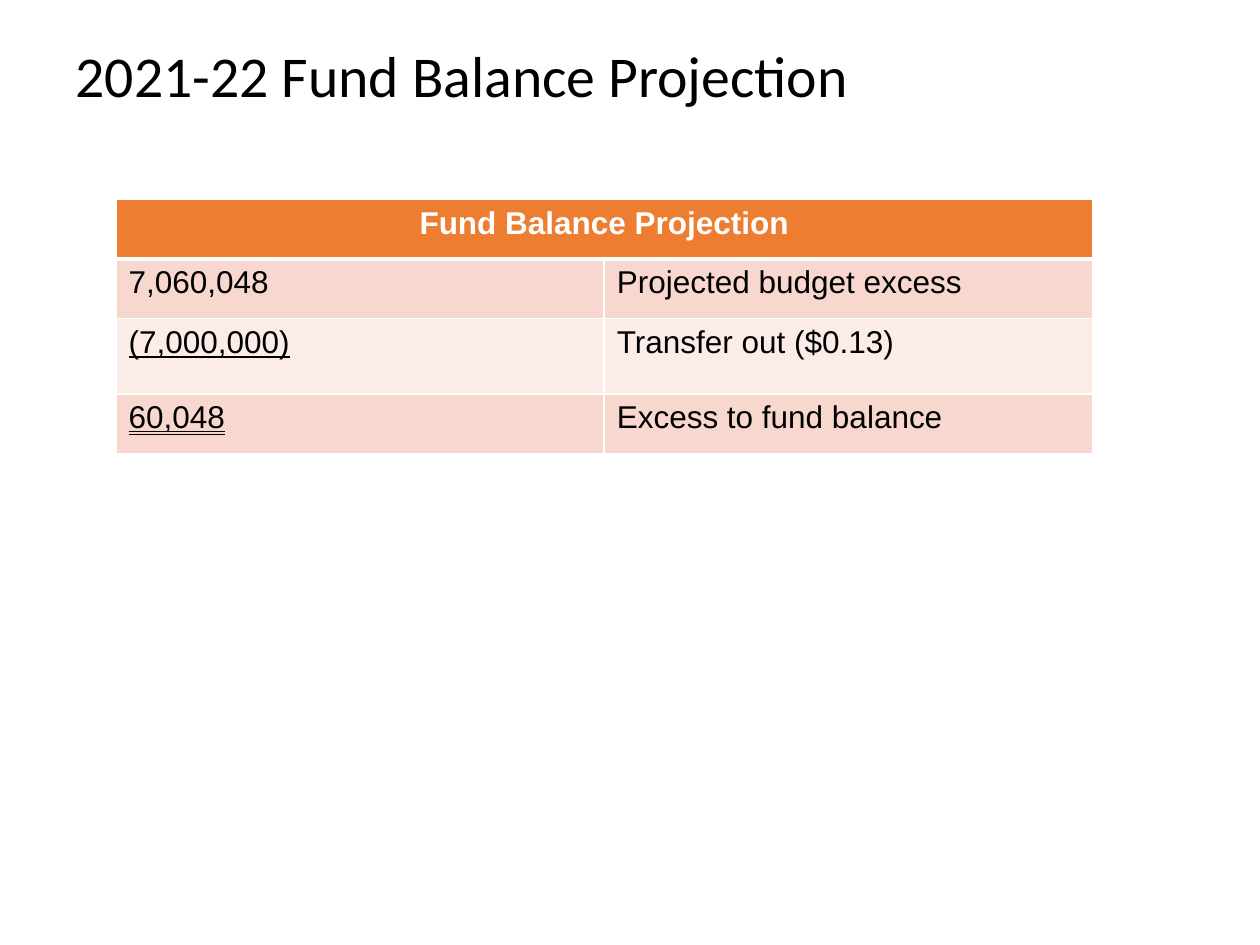
from dataclasses import dataclass

from lxml import etree
from pptx import Presentation
from pptx import util as u
from pptx.dml.color import RGBColor
from pptx.enum import text
from pptx.oxml import ns


@dataclass(frozen=True)
class Theme:
    title_font: str = "Calibri"
    table_font: str = "Arial"
    title_size: int = 33
    table_size: int = 18
    ink: str = "000000"
    white: str = "FFFFFF"
    header: str = "ED7D31"
    bands: tuple = ("F8D7CE", "FCECE8")
    rule: int = 1
    header_rule: int = 3


class SlideBuilder:
    def __init__(self, slide, theme):
        self.slide = slide
        self.theme = theme

    def style(self, font, color, **values):
        font.color.rgb = RGBColor.from_string(color)
        for name, value in values.items():
            setattr(font, name, value)

    def title(self, wording, left, top, width, height):
        heading = self.slide.shapes.title
        place = {"left": left, "top": top, "width": width, "height": height}
        for name, value in place.items():
            setattr(heading, name, u.Cm(value))
        frame = heading.text_frame
        frame.text = wording
        frame.word_wrap = True
        frame.auto_size = text.MSO_AUTO_SIZE.NONE
        frame.vertical_anchor = text.MSO_ANCHOR.MIDDLE
        line = frame.paragraphs[0]
        line.alignment = text.PP_ALIGN.LEFT
        line.line_spacing = 0.9
        self.style(line.runs[0].font, self.theme.ink, name=self.theme.title_font,
                   size=u.Pt(self.theme.title_size))

    def borders(self, cell, **widths):
        """Draw white cell edges; widths are points keyed L, R, T and B."""
        properties = cell._tc.get_or_add_tcPr()
        for position, (side, width) in enumerate(widths.items()):
            edge = etree.Element(ns.qn(f"a:ln{side}"), w=str(u.Pt(width)))
            fill = etree.SubElement(edge, ns.qn("a:solidFill"))
            etree.SubElement(fill, ns.qn("a:srgbClr"), val=self.theme.white)
            properties.insert(position, edge)

    def cell(self, cell, wording, fill, color, top, bottom, align, **font_values):
        cell.fill.solid()
        cell.fill.fore_color.rgb = RGBColor.from_string(fill)
        self.borders(cell, L=self.theme.rule, R=self.theme.rule, T=top, B=bottom)
        line = cell.text_frame.paragraphs[0]
        line.alignment = align
        if wording:
            run = line.add_run()
            run.text = wording
            self.style(run.font, color, name=self.theme.table_font,
                       size=u.Pt(self.theme.table_size), **font_values)

    def table(self, heading, entries, left, top, column_width, row_heights):
        """Place a merged heading over (amount, underline, meaning) entries."""
        theme = self.theme
        grid = self.slide.shapes.add_table(
            len(row_heights), 2, u.Cm(left), u.Cm(top),
            u.Cm(2 * column_width), u.Cm(sum(row_heights))).table
        for column in grid.columns:
            column.width = u.Cm(column_width)
        for row, height in zip(grid.rows, row_heights):
            row.height = u.Cm(height)

        grid.cell(0, 0).merge(grid.cell(0, 1))
        for column, wording in enumerate((heading, "")):
            self.cell(grid.cell(0, column), wording, theme.header, theme.white,
                      theme.rule, theme.header_rule, text.PP_ALIGN.CENTER, bold=True)

        for row, (amount, underline, meaning) in enumerate(entries, start=1):
            band = theme.bands[(row - 1) % len(theme.bands)]
            top_rule = theme.header_rule if row == 1 else theme.rule
            for column, (wording, mark) in enumerate(((amount, underline), (meaning, False))):
                self.cell(grid.cell(row, column), wording, band, theme.ink, top_rule,
                          theme.rule, text.PP_ALIGN.LEFT, bold=False, underline=mark)


def main():
    deck = Presentation()
    deck.slide_width, deck.slide_height = u.Cm(25.4), u.Cm(19.05)
    title_only = deck.slide_layouts[5]
    builder = SlideBuilder(deck.slides.add_slide(title_only), Theme())
    builder.title("2021-22 Fund Balance Projection", 1.27, 0.64, 22.73, 1.9)
    builder.table(
        "Fund Balance Projection",
        [("7,060,048", False, "Projected budget excess"),
         ("(7,000,000)", True, "Transfer out ($0.13)"),
         ("60,048", text.MSO_UNDERLINE.DOUBLE_LINE, "Excess to fund balance")],
        left=2.34, top=4.02, column_width=9.84, row_heights=[1.2, 1.2, 1.52, 1.2])
    deck.save("out.pptx")


if __name__ == "__main__":
    main()
